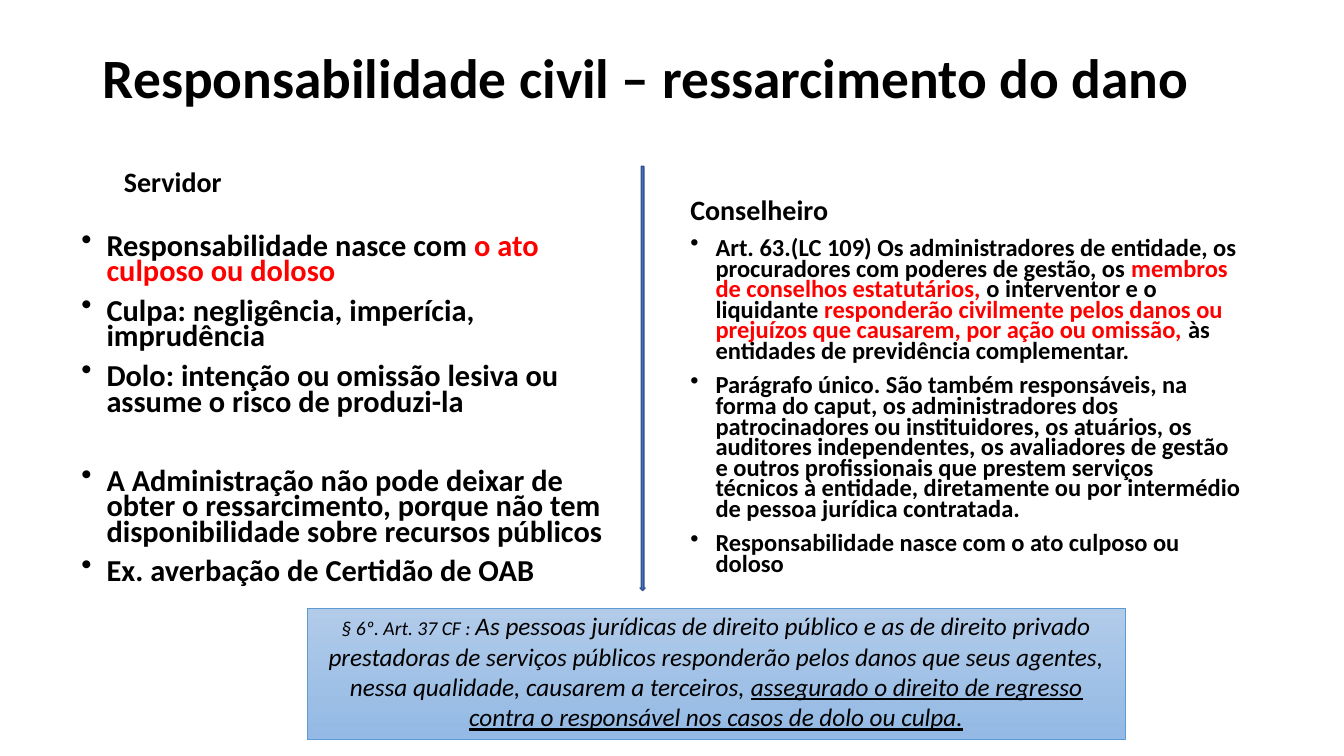
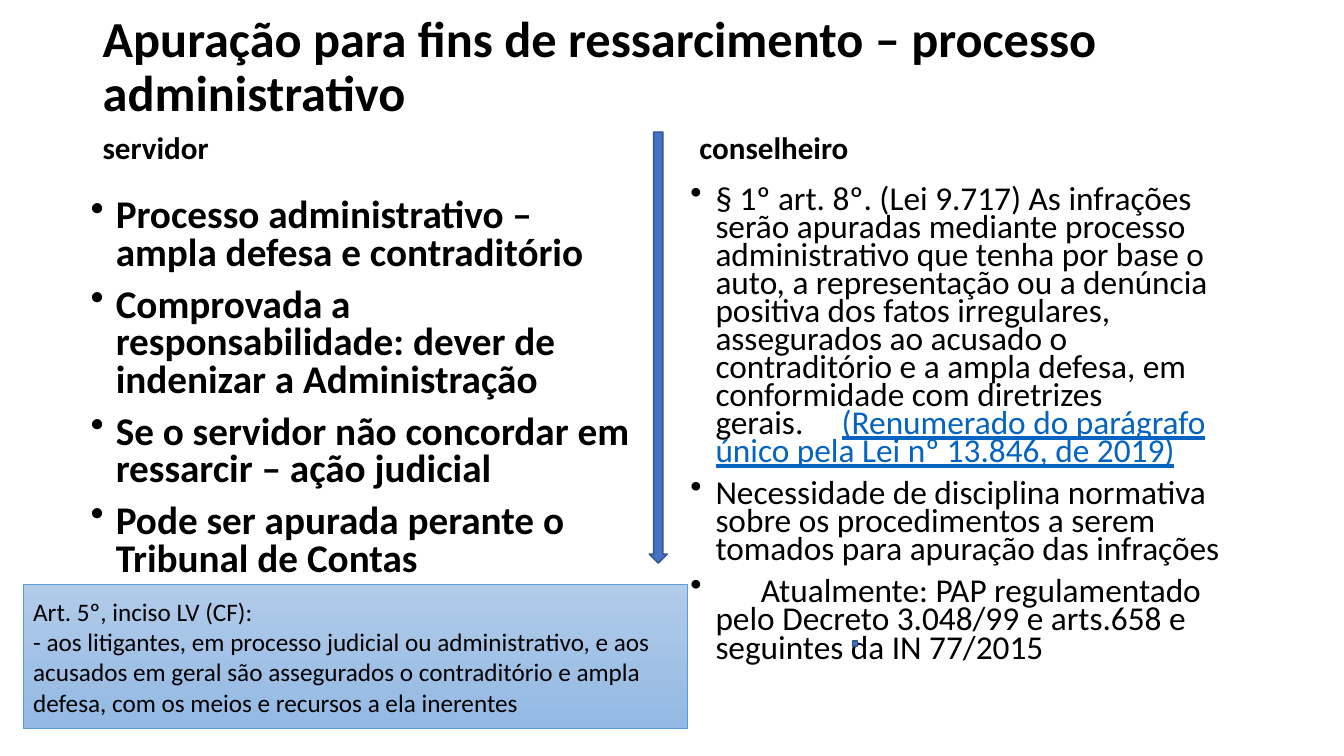
import pptx
import pptx.util
import pptx.dml.color
import pptx.enum.shapes
import pptx.enum.text
import lxml.etree

Pt = pptx.util.Pt
Kind = pptx.enum.shapes.MSO_SHAPE
Side = pptx.enum.text.PP_ALIGN
Hold = pptx.enum.text.MSO_ANCHOR
BLACK, RED, LINK = "000000", "FF0000", "0563C1"
BLUE, NAVY, EDGE = "4472C4", "325491", "5B9BD5"
PALE, SKY = "B1CBE9", "93B9E4"
FONT = "Calibri"
GAP = chr(160)


def hue(code):
    return pptx.dml.color.RGBColor.from_string(code)


def write(frame, paras, size, bold=False, lead=1, before=0,
          dots=False, hold=Hold.TOP, side=Side.LEFT):
    frame.word_wrap = True
    frame.auto_size = pptx.enum.text.MSO_AUTO_SIZE.NONE
    frame.vertical_anchor = hold
    for rank, runs in enumerate(paras):
        para = frame.add_paragraph() if rank else frame.paragraphs[0]
        para.alignment = side
        para.line_spacing = lead
        para.space_before = Pt(before)
        if dots:
            props = para._p.get_or_add_pPr()
            props.set("marL", str(Pt(18)))
            props.set("indent", str(Pt(-18)))
            mark = lxml.etree.SubElement(props, pptx.oxml.ns.qn("a:buChar"))
            mark.set("char", "•")
        for words, style in runs:
            run = para.add_run()
            run.text = words
            font = run.font
            font.name = FONT
            font.size = Pt(style.get("size", size))
            font.bold = bold
            font.italic = style.get("italic", False)
            font.underline = style.get("under", False)
            font.color.rgb = hue(style.get("color", BLACK))
            if "wide" in style:
                run._r.get_or_add_rPr().set("spc", str(style["wide"] * 100))


red = {"color": RED}
pages = [
    {
        "title": ("Responsabilidade civil – ressarcimento do dano", 39.6, 57),
        "heads": [("Servidor", 20, (81.4, 118.8, 356, 26.6)),
                  ("Conselheiro", 20, (486, 138.5, 408, 26.6))],
        "lists": [
            {"at": (51, 165, 406, 253), "size": 21.7, "lead": 0.7, "bold": True,
             "paras": [
                 [("Responsabilidade nasce com ", {}),
                  ("o ato culposo ou doloso", red)],
                 [("Culpa: negligência, imperícia, imprudência", {})],
                 [("Dolo: intenção ou omissão lesiva ou assume o risco de produzi-la", {})],
                 [("A Administração não pode deixar de obter o ressarcimento, porque não tem "
                   "disponibilidade sobre recursos públicos", {})],
                 [("Ex. averbação de Certidão de OAB", {})]],
             "part": 3},
            {"at": (486, 168, 408, 263), "size": 17.5, "lead": 0.7, "bold": True,
             "paras": [
                 [("Art. 63.(LC 109) Os administradores de entidade, os procuradores com "
                   "poderes de gestão, os ", {}),
                  ("membros de conselhos estatutários,", red),
                  (" o interventor e o liquidante ", {}),
                  ("responderão civilmente pelos danos ou prejuízos que causarem, por ação "
                   "ou omissão, ", red),
                  ("às entidades de previdência complementar.", {})],
                 [("Parágrafo único. São também responsáveis, na forma do caput, os "
                   "administradores dos patrocinadores ou instituidores, os atuários, os "
                   "auditores independentes, os avaliadores de gestão e outros profissionais "
                   "que prestem serviços técnicos à entidade, diretamente ou por intermédio "
                   "de pessoa jurídica contratada.", {})],
                 [("Responsabilidade nasce com o ato culposo ou doloso", {})]]}],
        "note": ((219.6, 434.9, 584, 93.6), Side.CENTER, [
            [("§ 6º. Art. 37 CF : ", {"size": 14, "italic": True}),
             ("As pessoas jurídicas de direito público e as de direito privado prestadoras "
              "de serviços públicos responderão pelos danos que seus agentes, nessa "
              "qualidade, causarem a terceiros, ", {"italic": True}),
             ("assegurado o direito de regresso contra o responsável nos casos de dolo ou "
              "culpa.", {"italic": True, "under": True})]], 8),
        "marks": [(Kind.DOWN_ARROW, (457.2, 118.8, 3.6, 303))],
    },
    {
        "title": ("Apuração para fins de ressarcimento – processo administrativo", 36, 39.6),
        "heads": [("servidor", 22.2, (66.2, 94.3, 406, 28)),
                  ("conselheiro", 22.2, (492.5, 94.3, 408, 28))],
        "lists": [
            {"at": (57.6, 138.5, 406, 305), "size": 28, "lead": 0.8, "bold": True,
             "paras": [
                 [("Processo administrativo – ampla defesa e contraditório", {})],
                 [("Comprovada a responsabilidade: dever de indenizar a Administração", {})],
                 [("Se o servidor não concordar em ressarcir – ação judicial", {})],
                 [("Pode ser apurada perante o Tribunal de Contas", {})]]},
            {"at": (486, 131, 408, 356.4), "size": 23.8, "lead": 0.7, "bold": False,
             "paras": [
                 [("§ 1º art. 8º. (Lei 9.717) As infrações serão apuradas mediante processo "
                   "administrativo que tenha por base o auto, a representação ou a denúncia "
                   "positiva dos fatos irregulares, assegurados ao acusado o contraditório e "
                   "a ampla defesa, em conformidade com diretrizes gerais.", {}),
                  (GAP, {"wide": 22}),
                  ("(Renumerado do parágrafo único pela Lei nº 13.846, de 2019)",
                   {"color": LINK, "under": True})],
                 [("Necessidade de disciplina normativa sobre os procedimentos a serem "
                   "tomados para apuração das infrações", {})],
                 [(GAP, {"wide": 27}),
                  ("Atualmente: PAP regulamentado pelo Decreto 3.048/99 e arts.658 e "
                   "seguintes da IN 77/2015", {})]]}],
        "note": ((16.6, 417.6, 474.5, 103), Side.LEFT, [
            [("Art. 5º, inciso LV (CF):", {})],
            [("- aos litigantes, em processo judicial ou administrativo, e aos acusados em "
              "geral são assegurados o contraditório e ampla defesa, com os meios e recursos "
              "a ela inerentes", {})]], 3.6),
        "marks": [(Kind.RECTANGLE, (609, 458, 3.6, 3.6)),
                  (Kind.DOWN_ARROW, (463.7, 94.3, 13, 308))],
    },
]

deck = pptx.Presentation()
deck.slide_width, deck.slide_height = Pt(960), Pt(540)

for page in pages:
    slide = deck.slides.add_slide(deck.slide_layouts[5])
    shapes = slide.shapes

    words, size, high = page["title"]
    title = shapes.title
    title.left, title.top, title.width, title.height = map(Pt, (66.2, 28.8, 828, high))
    write(title.text_frame, [[(words, {})]], size, True, 0.9, hold=Hold.MIDDLE)

    for words, size, place in page["heads"]:
        box = shapes.add_textbox(*map(Pt, place))
        write(box.text_frame, [[(words, {})]], size, True, 0.9, hold=Hold.BOTTOM)

    for item in page["lists"]:
        frame = shapes.add_textbox(*map(Pt, item["at"])).text_frame
        write(frame, item["paras"], item["size"], item["bold"], item["lead"], 10, True)
        if "part" in item:
            frame.paragraphs[item["part"]].space_before = Pt(38.5)

    place, side, paras, base = page["note"]
    note = shapes.add_shape(Kind.RECTANGLE, *map(Pt, place))
    note.shadow.inherit = False
    note.fill.gradient()
    note.fill.gradient_angle = 270
    for stop, code in zip(note.fill.gradient_stops, (PALE, SKY)):
        stop.color.rgb = hue(code)
    note.line.color.rgb = hue(EDGE)
    note.line.width = Pt(0.5)
    note.text_frame.margin_bottom = Pt(base)
    write(note.text_frame, paras, 18, hold=Hold.MIDDLE, side=side)

    for kind, place in page["marks"]:
        mark = shapes.add_shape(kind, *map(Pt, place))
        mark.shadow.inherit = False
        mark.fill.solid()
        mark.fill.fore_color.rgb = hue(BLUE)
        mark.line.color.rgb = hue(NAVY)
        mark.line.width = Pt(1)

deck.save("out.pptx")
